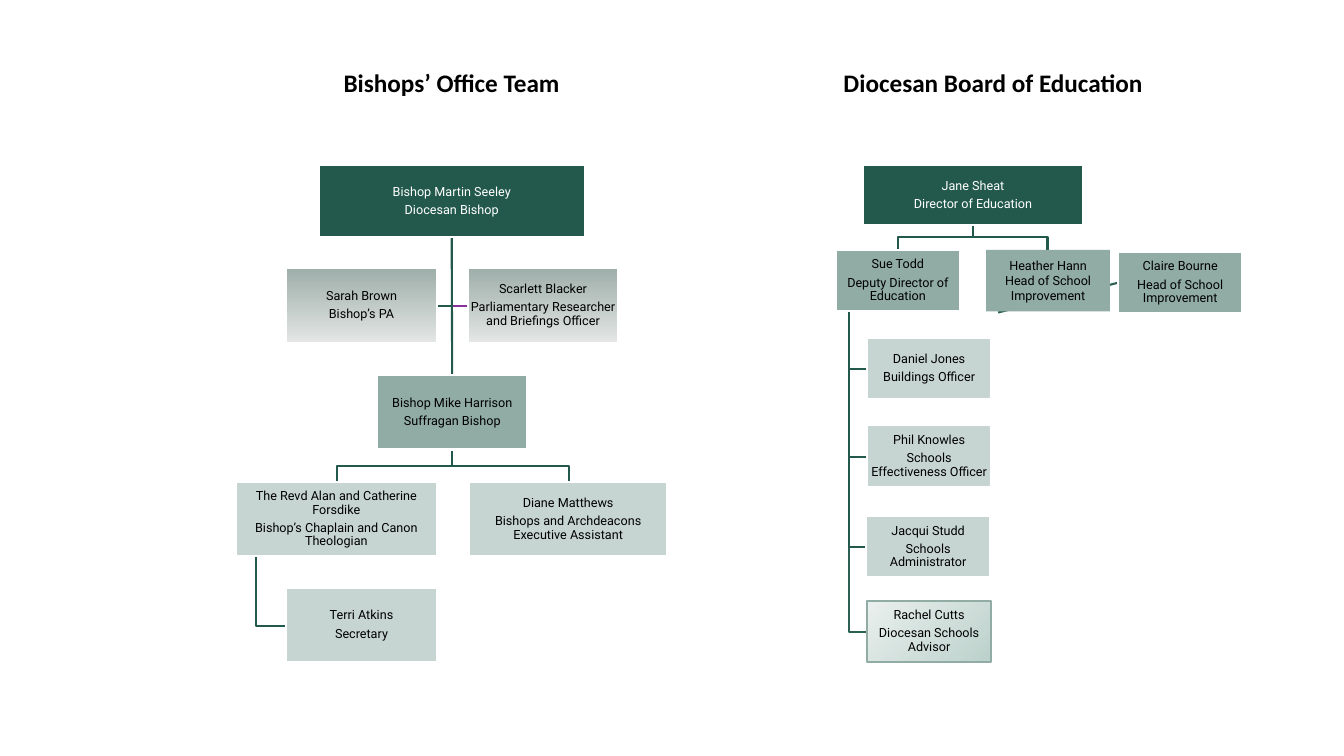
from lxml.etree import SubElement
from pptx import Presentation
from pptx.dml.color import RGBColor
from pptx.enum.shapes import MSO_CONNECTOR, MSO_SHAPE
from pptx.enum.text import MSO_ANCHOR, PP_ALIGN
from pptx.oxml.ns import qn
from pptx.util import Inches, Pt

COLORS = {
    "green": "23594C", "pine": "2C6053", "purple": "8A329B",
    "sage": "91ACA5", "pale": "C7D5D2", "white": "FFFFFF", "black": "000000",
    "assistant_top": "9EAEA9", "assistant_bottom": "E3E6E5",
    "advisor_dark": "BCD1CB", "advisor_light": "EAF0EE",
}
RGB = {name: RGBColor.from_string(value) for name, value in COLORS.items()}

# rank: fill, outline, text colour; a gradient fill is (start, end, angle)
RANKS = {
    "head": ("green", "white", "white"),
    "deputy": ("sage", "white", "black"),
    "staff": ("pale", "white", "black"),
    "assistant": (("assistant_top", "assistant_bottom", 270), "white", "black"),
    "advisor": (("advisor_dark", "advisor_light", 135), "sage", "black"),
    "improvement": ("sage", None, "black"),
}
BOX_TEXT = {
    "word_wrap": True, "vertical_anchor": MSO_ANCHOR.MIDDLE,
    "margin_left": Inches(0.01), "margin_right": Inches(0.01),
    "margin_top": Inches(0.01), "margin_bottom": Inches(0.01),
}
LINE_WIDTH = Pt(1.5)

prs = Presentation()
prs.slide_width, prs.slide_height = Inches(13.33), Inches(7.5)
slide = prs.slides.add_slide(prs.slide_layouts[6])
shapes = slide.shapes


def elbow(points, color):
    """Draw an open right-angled line through points given in inches."""
    start, *corners = [(Inches(x), Inches(y)) for x, y in points]
    builder = shapes.build_freeform(*start)
    builder.add_line_segments(corners, close=False)
    line = builder.convert_to_shape()
    line.fill.background()
    line.line.color.rgb = RGB[color]
    line.line.width = LINE_WIDTH
    line.shadow.inherit = False


def straight(x1, y1, x2, y2, color):
    connector = shapes.add_connector(
        MSO_CONNECTOR.STRAIGHT, Inches(x1), Inches(y1), Inches(x2), Inches(y2))
    connector.line.color.rgb = RGB[color]
    connector.line.width = LINE_WIDTH
    SubElement(connector.element.spPr, qn("a:effectLst"))
    return connector


# Headings
for heading, left in (("Bishops’ Office Team", 1.3),
                      ("Diocesan Board of Education", 6.67)):
    title = shapes.add_textbox(Inches(left), Inches(0.62), Inches(6.36), Inches(0.41))
    title.text_frame.word_wrap = True
    paragraph = title.text_frame.paragraphs[0]
    paragraph.text = heading
    paragraph.alignment = PP_ALIGN.CENTER
    for key, value in {"name": "Calibri", "size": Pt(18), "bold": True}.items():
        setattr(paragraph.font, key, value)
    paragraph.font.color.rgb = RGB["black"]

# Lines, drawn before the boxes that cover their ends
for side_x, color in ((4.64, "purple"), (4.33, "green")):
    elbow([(4.48, 2.35), (4.48, 3.04), (side_x, 3.04)], color)
for stem_x, top, bar, bottom, branches in (
        (4.48, 4.46, 4.62, 4.78, (5.64, 3.34)),
        (9.65, 2.22, 2.35, 2.48, (10.39, 8.91))):
    for branch_x in branches:
        elbow([(stem_x, top), (stem_x, bar), (branch_x, bar), (branch_x, bottom)], "green")
elbow([(2.54, 5.52), (2.54, 6.21), (2.84, 6.21)], "green")
for staff_y, color in ((6.27, "pine"), (5.43, "green"), (4.53, "green"), (3.66, "green")):
    elbow([(8.42, 3.1), (8.42, staff_y), (8.6, staff_y)], color)
bishops_line = straight(4.48, 2.35, 4.48, 3.72, "green")
improvement_line = straight(9.9, 3.1, 11.09, 2.81, "pine")

# Boxes: left, top, width, height, rank, name, role
people = [
    (3.16, 1.64, 2.64, 0.71, "head", "Bishop Martin Seeley", "Diocesan Bishop"),
    (2.84, 2.66, 1.49, 0.74, "assistant", "Sarah Brown", "Bishop’s PA"),
    (4.64, 2.66, 1.49, 0.74, "assistant", "Scarlett Blacker",
     "Parliamentary Researcher and Briefings Officer"),
    (3.74, 3.72, 1.49, 0.74, "deputy", "Bishop Mike Harrison", "Suffragan Bishop"),
    (2.34, 4.78, 1.99, 0.74, "staff", "The Revd Alan and Catherine Forsdike",
     "Bishop’s Chaplain and Canon Theologian"),
    (4.65, 4.78, 1.97, 0.74, "staff", "Diane Matthews",
     "Bishops and Archdeacons Executive Assistant"),
    (2.84, 5.83, 1.49, 0.74, "staff", "Terri Atkins", "Secretary"),
    (8.56, 1.64, 2.18, 0.59, "head", "Jane Sheat", "Director of Education"),
    (8.29, 2.48, 1.23, 0.61, "deputy", "Sue Todd", "Deputy Director of Education"),
    (9.78, 2.48, 1.23, 0.61, "improvement", "Heather Hann", "Head of School Improvement"),
    (11.09, 2.5, 1.23, 0.61, "deputy", "Claire Bourne", "Head of School Improvement"),
    (8.6, 3.35, 1.23, 0.61, "staff", "Daniel Jones", "Buildings Officer"),
    (8.6, 4.22, 1.23, 0.61, "staff", "Phil Knowles", "Schools Effectiveness Officer"),
    (8.59, 5.12, 1.23, 0.61, "staff", "Jacqui Studd", "Schools Administrator"),
    (8.6, 5.96, 1.23, 0.61, "advisor", "Rachel Cutts", "Diocesan Schools Advisor"),
]
boxes = {}
for left, top, width, height, rank, person, role in people:
    fill, outline, ink = RANKS[rank]
    box = shapes.add_shape(MSO_SHAPE.RECTANGLE, Inches(left), Inches(top),
                           Inches(width), Inches(height))
    box.shadow.inherit = False
    if isinstance(fill, tuple):
        *stop_colors, angle = fill
        box.fill.gradient()
        box.fill.gradient_angle = angle
        for stop, color in zip(box.fill.gradient_stops, stop_colors):
            stop.color.rgb = RGB[color]
    else:
        box.fill.solid()
        box.fill.fore_color.rgb = RGB[fill]
    if outline:
        box.line.color.rgb = RGB[outline]
        box.line.width = LINE_WIDTH
    else:
        box.line.fill.background()

    frame = box.text_frame
    for key, value in BOX_TEXT.items():
        setattr(frame, key, value)
    frame.text = f"{person}\n{role}"
    for paragraph in frame.paragraphs:
        paragraph.alignment = PP_ALIGN.CENTER
        if rank != "improvement":
            paragraph.line_spacing = 0.9
            paragraph.space_after = Pt(3.15)
        paragraph.font.name = "Roboto"
        paragraph.font.size = Pt(9)
        paragraph.font.color.rgb = RGB[ink]
    boxes[person] = box

bishops_line.begin_connect(boxes["Bishop Martin Seeley"], 2)
bishops_line.end_connect(boxes["Bishop Mike Harrison"], 0)
improvement_line.end_connect(boxes["Claire Bourne"], 1)

prs.save("out.pptx")
